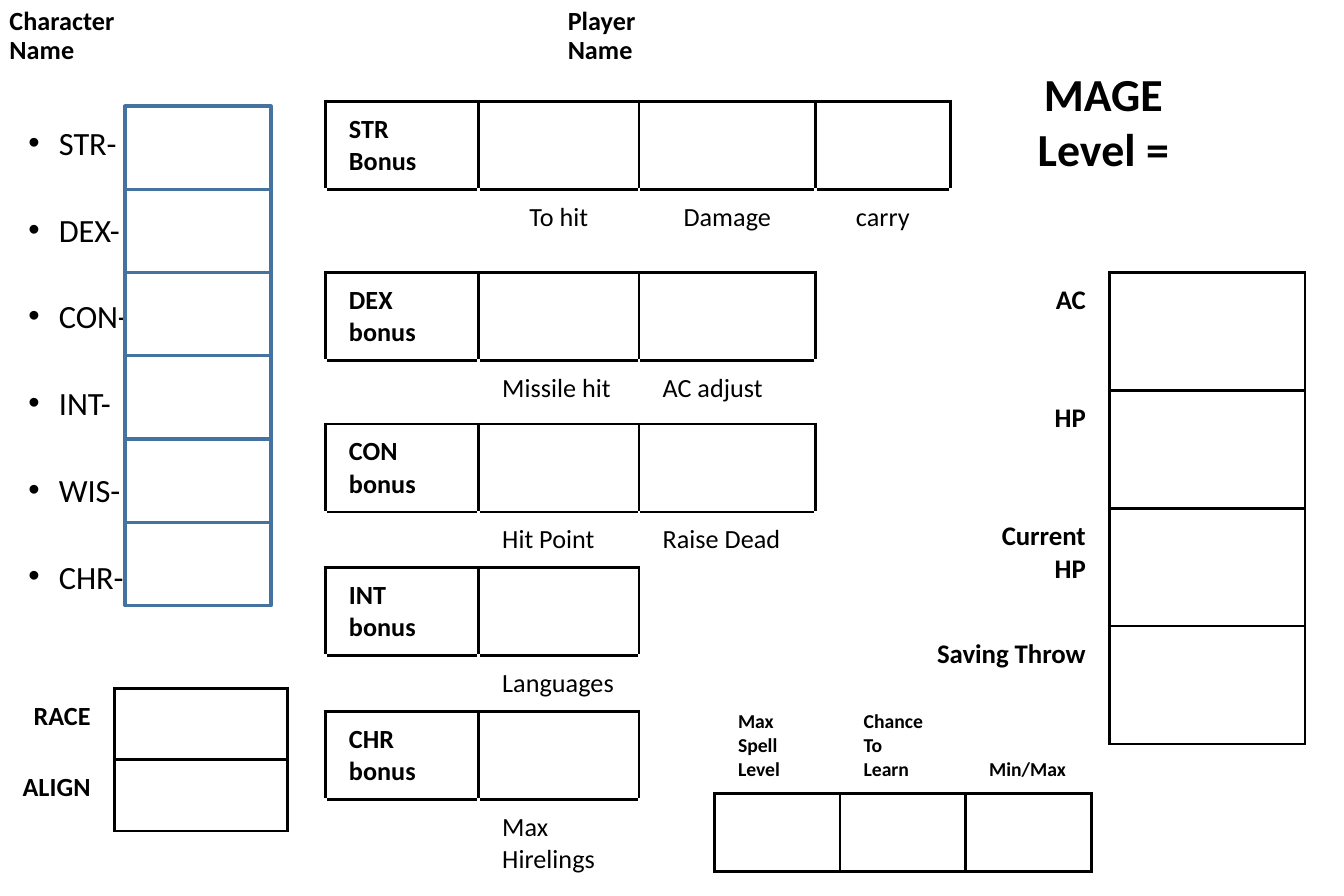
"""Build a one-page character sheet for a mage."""
import dataclasses

import lxml.etree
import pptx
import pptx.dml.color
import pptx.enum.shapes
import pptx.enum.text
import pptx.oxml.ns
import pptx.util

ALIGN = pptx.enum.text.PP_ALIGN
ANCHOR = pptx.enum.text.MSO_ANCHOR
WIDTH, HEIGHT = pptx.util.Inches(5.7), pptx.util.Inches(3.8)
COLUMNS, ROWS = 57, 38
NO_GRID_STYLE = "{2D5ABB26-0587-4C30-8999-92F81FD0307C}"


@dataclasses.dataclass(frozen=True)
class Theme:
    font: str = "Calibri"
    ink: str = "000000"
    paper: str = "FFFFFF"
    ability: str = "43739E"
    heading: float = 14
    list: float = 9.9
    vital: float = 8.2
    label: float = 8
    small: float = 6
    line: float = 1


@dataclasses.dataclass(frozen=True)
class Cell:
    text: str = ""
    bold: bool = True
    align: int = ALIGN.LEFT
    box: bool = False
    white_sides: bool = False


THEME = Theme()
BOX = Cell(box=True)


def across(columns):
    return int(WIDTH * columns / COLUMNS)


def down(rows):
    return int(HEIGHT * rows / ROWS)


def place(left, top, width, height):
    return across(left), down(top), across(width), down(height)


def colour(name):
    return pptx.dml.color.RGBColor.from_string(name)


def write(frame, text, size=THEME.label, bold=True, align=ALIGN.LEFT,
          spacing=None, before=None):
    """Write one paragraph per line of text."""
    frame.text = text
    for paragraph in frame.paragraphs:
        paragraph.alignment = align
        if spacing:
            paragraph.line_spacing = spacing
        if before is not None:
            paragraph.space_before = pptx.util.Pt(before)
        for run in paragraph.runs:
            run.font.name = THEME.font
            run.font.size = pptx.util.Pt(size)
            run.font.bold = bold
            run.font.color.rgb = colour(THEME.ink)
        if not paragraph.runs:
            lxml.etree.SubElement(paragraph._p, pptx.oxml.ns.qn("a:endParaRPr"),
                                  sz=str(round(size * 100)))


def move(shape, *grid):
    shape.left, shape.top, shape.width, shape.height = place(*grid)


def format_name(shape, text):
    frame = shape.text_frame
    frame.word_wrap = True
    frame.auto_size = pptx.enum.text.MSO_AUTO_SIZE.NONE
    frame.vertical_anchor = ANCHOR.MIDDLE
    write(frame, text, spacing=0.9, before=0)


def add_names(slide):
    title = slide.shapes.title
    move(title, -0.6, -0.3, 7.2, 3.7)
    format_name(title, "Character Name")
    format_name(slide.shapes.add_textbox(*place(23.1, -0.3, 6.4, 3.7)), "Player Name")


def add_class(slide):
    frame = slide.shapes.add_textbox(*place(43, 2.3, 7.6, 5.7)).text_frame
    frame.word_wrap = False
    frame.auto_size = pptx.enum.text.MSO_AUTO_SIZE.SHAPE_TO_FIT_TEXT
    write(frame, "MAGE\nLevel =", size=THEME.heading, align=ALIGN.CENTER)


def add_abilities(slide):
    """Fill the bulleted list and draw a score box for each ability."""
    abilities = ("STR-", "DEX-", "CON-", "INT-", "WIS-", "CHR-")
    body = slide.placeholders[1]
    move(body, 0.2, 3.4, 11.1, 24.1)
    frame = body.text_frame
    frame.auto_size = pptx.enum.text.MSO_AUTO_SIZE.NONE
    write(frame, "\n".join(abilities), size=THEME.list, bold=False,
          spacing=1.8, before=5.1)
    for paragraph in frame.paragraphs:
        properties = paragraph._p.get_or_add_pPr()
        properties.set("marL", str(across(1.3)))
        properties.set("indent", str(-across(1.3)))
        lxml.etree.SubElement(properties, pptx.oxml.ns.qn("a:buChar"), char="•")
    for index in range(len(abilities)):
        box = slide.shapes.add_shape(pptx.enum.shapes.MSO_SHAPE.RECTANGLE,
                                     *place(5.3, 4.5 + 3.53 * index, 6.2, 3.53))
        box.shadow.inherit = False
        box.fill.background()
        box.line.color.rgb = colour(THEME.ability)
        box.line.width = pptx.util.Pt(THEME.line)


def draw_borders(cell, sides, name):
    properties = cell._tc.get_or_add_tcPr()
    for side in sides:
        line = lxml.etree.SubElement(properties, pptx.oxml.ns.qn("a:ln" + side),
                                     w=str(pptx.util.Pt(THEME.line)))
        fill = lxml.etree.SubElement(line, pptx.oxml.ns.qn("a:solidFill"))
        lxml.etree.SubElement(fill, pptx.oxml.ns.qn("a:srgbClr"), val=name)


def add_grid(slide, left, top, columns, rows, cells, size=THEME.label, filled=False):
    """Add a table whose cells carry their own text format and borders."""
    table = slide.shapes.add_table(
        len(rows), len(columns), *place(left, top, sum(columns), sum(rows))).table
    table.first_row = table.horz_banding = False
    table._tbl.tblPr.find(pptx.oxml.ns.qn("a:tableStyleId")).text = NO_GRID_STYLE
    for column, width in zip(table.columns, columns):
        column.width = across(width)
    for row, height, contents in zip(table.rows, rows, cells):
        row.height = down(height)
        for cell, content in zip(row.cells, contents):
            write(cell.text_frame, content.text, size=size,
                  bold=content.bold, align=content.align)
            if content.box:
                draw_borders(cell, "LRTB", THEME.ink)
            elif content.white_sides:
                draw_borders(cell, "LR", THEME.paper)
            if filled:
                cell.fill.solid()
                cell.fill.fore_color.rgb = colour(THEME.paper)
            else:
                cell.fill.background()


def add_bonuses(slide):
    """Add each bonus as a row of boxes above a row of captions."""
    columns = (6.5, 6.8, 7.5, 5.7)
    bonuses = (
        ("STR\nBonus", ("To hit", "Damage", "carry"), ALIGN.CENTER, 3.52),
        ("DEX bonus", ("Missile hit", "AC adjust"), ALIGN.LEFT, 2.71),
        ("CON bonus", ("Hit Point", "Raise Dead"), ALIGN.LEFT, 2.37),
        ("INT bonus", ("Languages",), ALIGN.LEFT, 2.37),
        ("CHR bonus", ("Max Hirelings",), ALIGN.LEFT, 3.73),
    )
    rows, cells = [], []
    for name, captions, align, height in bonuses:
        spare = len(columns) - 1 - len(captions)
        rows += [3.73, height]
        cells.append([Cell(name, box=True)] + [BOX] * len(captions) + [Cell()] * spare)
        cells.append([Cell(text, bold=False, align=align, white_sides=True)
                      for text in ("", *captions, *[""] * spare)])
    add_grid(slide, 13.8, 4.3, columns, rows, cells, filled=True)


def add_labelled_boxes(slide, left, top, columns, height, labels, size):
    cells = [(Cell(label, align=ALIGN.RIGHT), BOX) for label in labels]
    add_grid(slide, left, top, columns, [height] * len(labels), cells, size)


def add_spells(slide):
    headings = ("Max Spell Level", "Chance\nTo\nLearn", "\n\nMin/Max")
    cells = ([Cell(heading.strip()) for heading in headings], [BOX] * len(headings))
    add_grid(slide, 30.3, 29.6, [5.33] * len(headings), (4.05, 3.3), cells, THEME.small)
    table = slide.shapes[-1].table
    for cell in table.rows[0].cells:
        cell.vertical_anchor = ANCHOR.BOTTOM


def main():
    presentation = pptx.Presentation()
    presentation.slide_width, presentation.slide_height = WIDTH, HEIGHT
    slide = presentation.slides.add_slide(presentation.slide_layouts[1])
    add_class(slide)
    add_names(slide)
    add_abilities(slide)
    add_bonuses(slide)
    add_labelled_boxes(slide, -0.6, 29.2, (5.45, 7.35), 3.02,
                       ("RACE", "ALIGN"), THEME.label)
    add_labelled_boxes(slide, 37.5, 11.55, (9.55, 8.3), 5,
                       ("AC", "HP", "Current\nHP", "Saving Throw"), THEME.vital)
    add_spells(slide)
    presentation.save("out.pptx")


if __name__ == "__main__":
    main()
